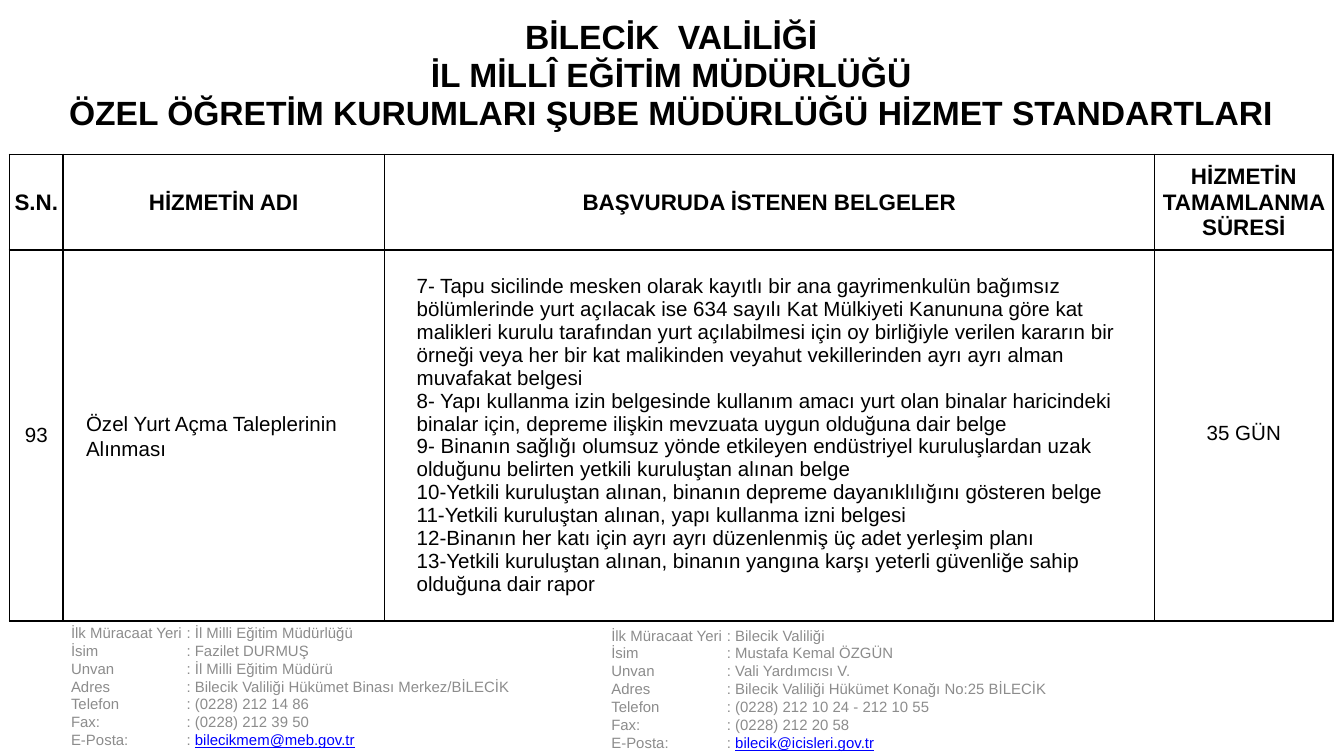
from dataclasses import dataclass

from lxml import etree
from pptx import Presentation
from pptx.dml.color import RGBColor
from pptx.enum.text import MSO_ANCHOR, PP_ALIGN
from pptx.oxml.ns import qn
from pptx.util import Inches, Pt

MIDDLE, BOTTOM = MSO_ANCHOR.MIDDLE, MSO_ANCHOR.BOTTOM
LEFT, CENTER = PP_ALIGN.LEFT, PP_ALIGN.CENTER


@dataclass(frozen=True)
class Theme:
    font: str = "Arial"
    ink: str = "000000"
    muted: str = "8C8C8C"
    link: str = "0000FF"
    title: int = 18
    header: int = 12
    body: int = 11
    contact: int = 8
    border: int = 1


THEME = Theme()

TITLE = ["BİLECİK  VALİLİĞİ", "İL MİLLÎ EĞİTİM MÜDÜRLÜĞÜ",
         "ÖZEL ÖĞRETİM KURUMLARI ŞUBE MÜDÜRLÜĞÜ HİZMET STANDARTLARI"]
HEADERS = ["S.N.", "HİZMETİN ADI", "BAŞVURUDA İSTENEN BELGELER",
           "HİZMETİN TAMAMLANMA SÜRESİ"]
NUMBER = "93"
SERVICE = ["Özel Yurt Açma Taleplerinin", "Alınması"]
DOCUMENTS = [
    "7- Tapu sicilinde mesken olarak kayıtlı bir ana gayrimenkulün bağımsız "
    "bölümlerinde yurt açılacak ise 634 sayılı Kat Mülkiyeti Kanununa göre kat "
    "malikleri kurulu tarafından yurt açılabilmesi için oy birliğiyle verilen "
    "kararın bir örneği veya her bir kat malikinden veyahut vekillerinden ayrı "
    "ayrı alman muvafakat belgesi",
    "8- Yapı kullanma izin belgesinde kullanım amacı yurt olan binalar "
    "haricindeki binalar için, depreme ilişkin mevzuata uygun olduğuna dair belge",
    "9- Binanın sağlığı olumsuz yönde etkileyen endüstriyel kuruluşlardan uzak "
    "olduğunu belirten yetkili kuruluştan alınan belge",
    "10-Yetkili kuruluştan alınan, binanın depreme dayanıklılığını gösteren belge",
    "11-Yetkili kuruluştan alınan, yapı kullanma izni belgesi",
    "12-Binanın her katı için ayrı ayrı düzenlenmiş üç adet yerleşim planı",
    "13-Yetkili kuruluştan alınan, binanın yangına karşı yeterli güvenliğe "
    "sahip olduğuna dair rapor",
]
DURATION = "35 GÜN"

CONTACT_LABELS = ["İlk Müracaat Yeri", "İsim", "Unvan", "Adres", "Telefon",
                  "Fax:", "E-Posta:"]
DIRECTORATE = ["İl Milli Eğitim Müdürlüğü", "Fazilet DURMUŞ",
               "İl Milli Eğitim Müdürü",
               "Bilecik Valiliği Hükümet Binası Merkez/BİLECİK",
               "(0228) 212 14 86", "(0228) 212 39 50", "bilecikmem@meb.gov.tr"]
GOVERNORSHIP = ["Bilecik Valiliği", "Mustafa Kemal ÖZGÜN", "Vali Yardımcısı V.",
                "Bilecik Valiliği Hükümet Konağı No:25 BİLECİK",
                "(0228) 212 10 24 - 212 10 55", "(0228) 212 20 58",
                "bilecik@icisleri.gov.tr"]


def style_run(r, size, color, bold=False):
    r.font.name = THEME.font
    r.font.size = Pt(size)
    r.font.bold = bold
    r.font.color.rgb = RGBColor.from_string(color)


def set_borders(cell, visible):
    tcPr = cell._tc.get_or_add_tcPr()
    for side in "LRTB":
        ln = etree.SubElement(tcPr, qn(f"a:ln{side}"), w=str(Pt(THEME.border)))
        if side in visible:
            fill = etree.SubElement(ln, qn("a:solidFill"))
            etree.SubElement(fill, qn("a:srgbClr"), val=THEME.ink)
        else:
            etree.SubElement(ln, qn("a:noFill"))


def fill_cell(cell, lines, size, bold=False, align=CENTER, indent=0,
              inset=(0, 0), spacing=None):
    cell.vertical_anchor = MIDDLE
    cell.margin_left = cell.margin_right = Inches(inset[0])
    cell.margin_top = cell.margin_bottom = Inches(inset[1])
    tf = cell.text_frame
    tf.text = "\n".join(lines)
    for p in tf.paragraphs:
        p.alignment = align
        p.line_spacing = spacing
        p._p.get_or_add_pPr().set("marL", str(Inches(indent)))
        for r in p.runs:
            style_run(r, size, THEME.ink, bold)


def add_service_table(s, x, y, w, h):
    cols, rows = [0.4, 2.39, 5.73, 1.33], [1.17, 0.71, 2.76]
    table = s.shapes.add_table(len(rows), len(cols), Inches(x), Inches(y),
                               Inches(w), Inches(h)).table
    table.first_row = table.horz_banding = False
    for column, width in zip(table.columns, cols):
        column.width = Inches(width)
    for i, (row, height) in enumerate(zip(table.rows, rows)):
        row.height = Inches(height)
        for cell in row.cells:
            set_borders(cell, "LRTB" if i else "B")
            cell.fill.background()

    title = table.cell(0, 0)
    title.merge(table.cell(0, len(cols) - 1))
    fill_cell(title, TITLE, THEME.title, bold=True)
    for i, header in enumerate(HEADERS):
        fill_cell(table.cell(1, i), [header], THEME.header, bold=True)

    inset = (0.1, 0.05)
    number, service, documents, duration = table.rows[2].cells
    fill_cell(number, [NUMBER], THEME.body)
    fill_cell(service, SERVICE, THEME.body, align=LEFT, indent=0.07,
              inset=inset, spacing=1.1)
    fill_cell(documents, DOCUMENTS, THEME.body, align=LEFT, indent=0.14,
              inset=inset)
    fill_cell(duration, [DURATION], THEME.body, inset=inset, spacing=Pt(10))


def add_contact(s, x, y, w, h, values):
    tf = s.shapes.add_textbox(Inches(x), Inches(y), Inches(w), Inches(h)).text_frame
    tf.word_wrap = True
    tf.vertical_anchor = BOTTOM
    tf.text = "\n".join(f"{label}\t: " for label in CONTACT_LABELS)
    for p, value in zip(tf.paragraphs, values):
        tabs = etree.SubElement(p._p.get_or_add_pPr(), qn("a:tabLst"))
        etree.SubElement(tabs, qn("a:tab"), pos=str(Inches(0.86)), algn="l")
        p.add_run().text = value
        for r in p.runs:
            style_run(r, THEME.contact, THEME.muted)
    email = tf.paragraphs[-1].runs[-1]
    email.font.underline = True
    email.font.color.rgb = RGBColor.from_string(THEME.link)


def main():
    prs = Presentation()
    prs.slide_width = Inches(10)
    prs.slide_height = prs.slide_width * 9 // 16
    s = prs.slides.add_slide(prs.slide_layouts[6])
    add_contact(s, 0.43, 4.62, 4.72, 1, DIRECTORATE)
    add_contact(s, 4.45, 4.64, 4.72, 1, GOVERNORSHIP)
    add_service_table(s, 0.07, -0.02, 9.85, 4.64)
    prs.save("out.pptx")


if __name__ == "__main__":
    main()
